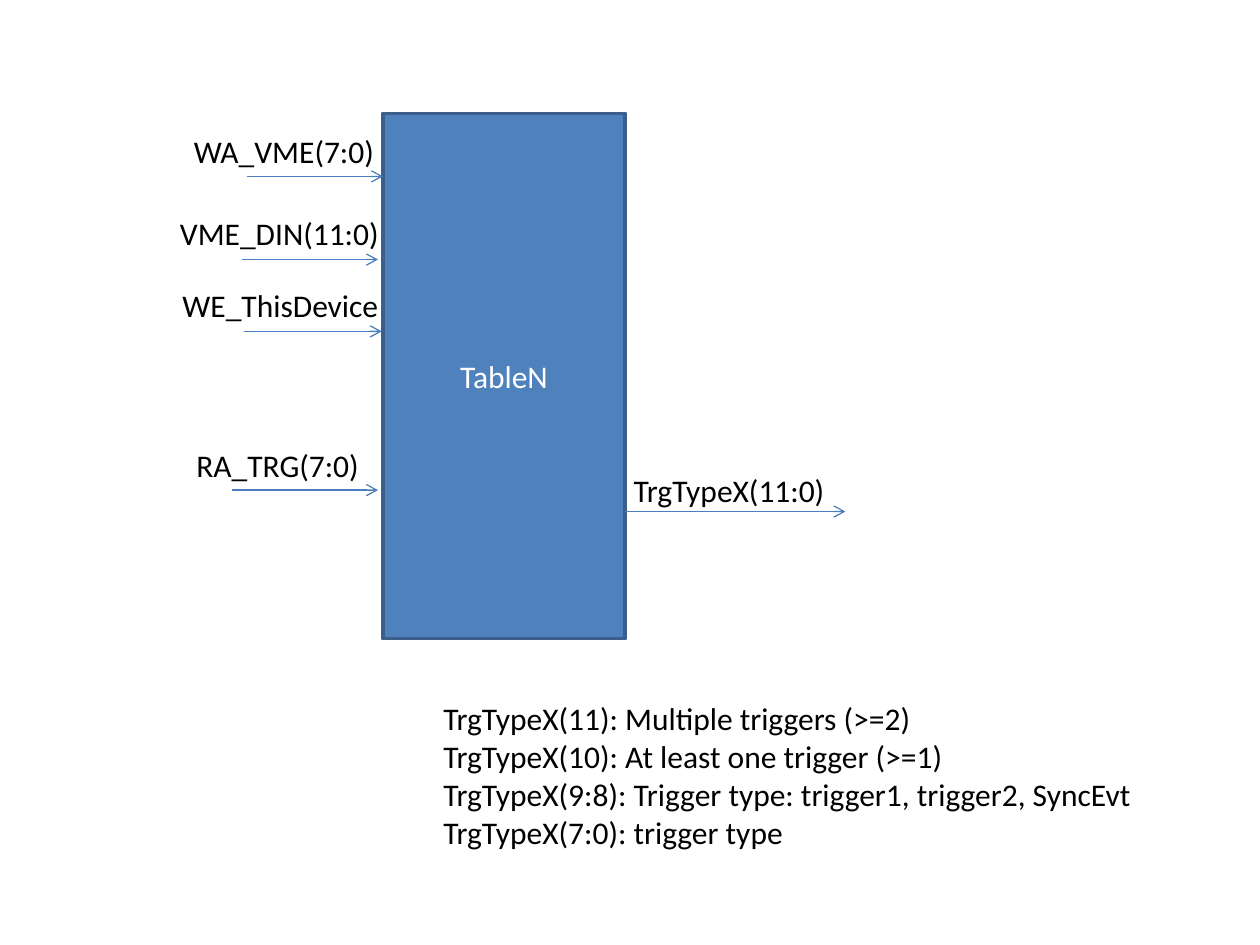
from lxml import etree
from pptx import Presentation
from pptx.dml.color import RGBColor
from pptx.enum import shapes, text
from pptx.oxml import ns
from pptx.util import Inches, Pt

BLUE = RGBColor(0x4F, 0x81, 0xBD)
EDGE = RGBColor(0x3A, 0x5F, 0x8C)
WIRE = RGBColor(0x4B, 0x7E, 0xBC)
BLACK = RGBColor(0, 0, 0)
WHITE = RGBColor(255, 255, 255)

INPUTS = [
    ("WA_VME(7:0)", (1.44, 1, 1.65, 0.4), False, (1.96, 3.04, 1.4)),
    ("VME_DIN(11:0)", (1.33, 1.65, 1.8, 0.4), False, (1.92, 3, 2.06)),
    ("WE_ThisDevice", (1.35, 2.22, 1.77, 0.4), False, (1.94, 3.03, 2.63)),
    ("RA_TRG(7:0)", (1.46, 3.49, 1.58, 0.4), True, (1.84, 3, 3.89)),
]
OUTPUT = ("TrgTypeX(11:0)", (4.93, 3.69, 1.78, 0.4), True, (4.96, 6.71, 4.06))
NOTES = [
    "TrgTypeX(11): Multiple triggers (>=2)",
    "TrgTypeX(10): At least one trigger (>=1)",
    "TrgTypeX(9:8): Trigger type: trigger1, trigger2, SyncEvt",
    "TrgTypeX(7:0): trigger type",
]


def write(frame, lines, color, align):
    frame.text = "\n".join(lines)
    for para in frame.paragraphs:
        para.alignment = align
        para.font.color.rgb = color
        for key, value in {"name": "Calibri", "size": Pt(18)}.items():
            setattr(para.font, key, value)


def label(slide, box, lines, wrap=False):
    frame = slide.shapes.add_textbox(*map(Inches, box)).text_frame
    frame.word_wrap = wrap
    frame.auto_size = text.MSO_AUTO_SIZE.SHAPE_TO_FIT_TEXT
    write(frame, lines, BLACK, text.PP_ALIGN.LEFT)


def arrow(slide, start, end, y):
    wire = slide.shapes.add_connector(
        shapes.MSO_CONNECTOR.STRAIGHT, *map(Inches, (start, y, end, y)))
    wire.line.color.rgb = WIRE
    wire.line.width = Pt(0.75)
    tip = etree.SubElement(wire.line._get_or_add_ln(), ns.qn("a:tailEnd"))
    tip.set("type", "arrow")
    etree.SubElement(wire._element.spPr, ns.qn("a:effectLst"))


def signal(slide, name, box, wrap, ends):
    arrow(slide, *ends)
    label(slide, box, [name], wrap)


def block(slide, box, name):
    rect = slide.shapes.add_shape(
        shapes.MSO_SHAPE.RECTANGLE, *map(Inches, box))
    rect.shadow.inherit = False
    rect.fill.solid()
    rect.fill.fore_color.rgb = BLUE
    rect.line.color.rgb = EDGE
    rect.line.width = Pt(2)
    rect.text_frame.vertical_anchor = text.MSO_ANCHOR.MIDDLE
    write(rect.text_frame, [name], WHITE, text.PP_ALIGN.CENTER)


def main():
    deck = Presentation()
    deck.slide_width, deck.slide_height = Inches(10), Inches(7.5)
    slide = deck.slides.add_slide(deck.slide_layouts[6])
    block(slide, (3.04, 0.9, 1.92, 4.17), "TableN")
    for item in INPUTS + [OUTPUT]:
        signal(slide, *item)
    label(slide, (3.42, 5.5, 5.8, 1.31), NOTES)
    deck.save("out.pptx")


if __name__ == "__main__":
    main()
